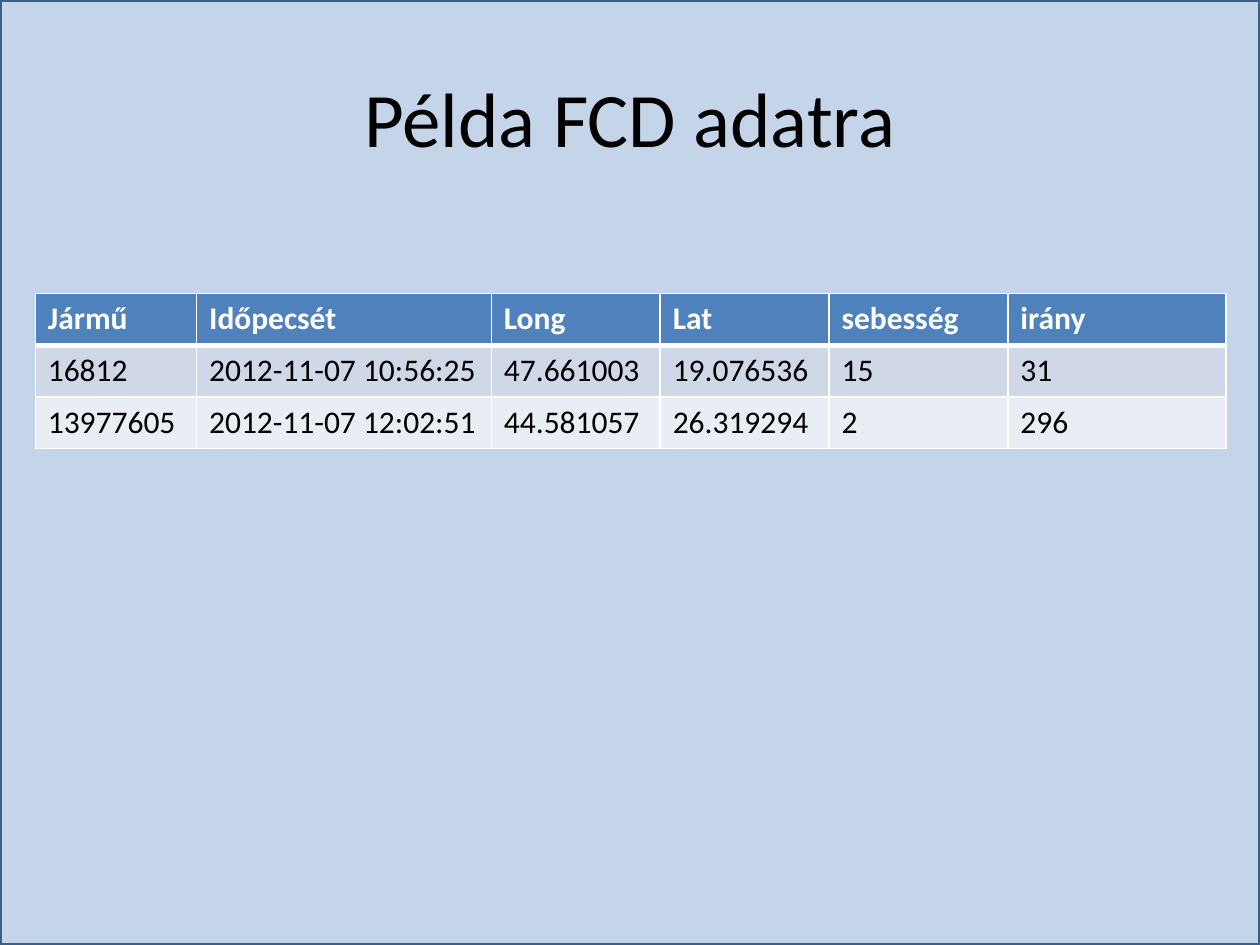
from lxml.etree import SubElement
from pptx import Presentation
from pptx.dml.color import RGBColor
from pptx.enum.shapes import MSO_SHAPE
from pptx.enum.text import MSO_ANCHOR, PP_ALIGN
from pptx.oxml.ns import qn
from pptx.util import Inches, Pt

COLUMN_WIDTHS = [1.28, 2.34, 1.34, 1.34, 1.42, 1.73]
ROW_HEIGHT = 0.41
ROW_FILLS = ["4F81BD", "D0D8E8", "E9EDF4"]
RECORDS = [
    ["Jármű", "Időpecsét", "Long", "Lat", "sebesség", "irány"],
    ["16812", "2012-11-07 10:56:25", "47.661003", "19.076536", "15", "31"],
    ["13977605", "2012-11-07 12:02:51", "44.581057", "26.319294", "2", "296"],
]


def paint(color_format, color):
    color_format.rgb = RGBColor.from_string(color)


def fill_solid(fill, color):
    fill.solid()
    paint(fill.fore_color, color)


def add_text(paragraph, text, size, color, bold=False):
    run = paragraph.add_run()
    run.text = text
    run.font.name = "Calibri"
    run.font.size = Pt(size)
    run.font.bold = bold
    paint(run.font.color, color)


def add_backdrop(slide, width, height):
    backdrop = slide.shapes.add_shape(MSO_SHAPE.RECTANGLE, 0, 0, width, height)
    backdrop.shadow.inherit = False
    fill_solid(backdrop.fill, "95B3D7")
    tint = backdrop.fill._xPr.find(qn("a:solidFill"))[0]
    SubElement(tint, qn("a:alpha"), val="54000")
    backdrop.line.width = Pt(2)
    paint(backdrop.line.color, "3A5F8C")


def add_title(slide, text):
    title = slide.shapes.add_textbox(Inches(0.5), Inches(0.3), Inches(9), Inches(1.25))
    frame = title.text_frame
    frame.word_wrap = True
    frame.vertical_anchor = MSO_ANCHOR.MIDDLE
    heading = frame.paragraphs[0]
    heading.alignment = PP_ALIGN.CENTER
    add_text(heading, text, 44, "000000")


def add_border(cell, side, points):
    properties = cell._tc.get_or_add_tcPr()
    border = SubElement(properties, qn(f"a:{side}"), w=str(Pt(points)))
    stroke = SubElement(border, qn("a:solidFill"))
    SubElement(stroke, qn("a:srgbClr"), val="FFFFFF")


def style_cell(cell, text, row):
    is_header = row == 0
    widths = {"lnL": 1, "lnR": 1, "lnT": 3 if row == 1 else 1, "lnB": 3 if is_header else 1}
    for side, points in widths.items():
        add_border(cell, side, points)
    fill_solid(cell.fill, ROW_FILLS[row])
    color = "FFFFFF" if is_header else "000000"
    add_text(cell.text_frame.paragraphs[0], text, 18, color, is_header)


def add_records(slide):
    table = slide.shapes.add_table(
        len(RECORDS), len(COLUMN_WIDTHS), Inches(0.28), Inches(2.33),
        Inches(sum(COLUMN_WIDTHS)), Inches(ROW_HEIGHT * len(RECORDS)),
    ).table
    for column, width in zip(table.columns, COLUMN_WIDTHS):
        column.width = Inches(width)
    for row, record in enumerate(RECORDS):
        table.rows[row].height = Inches(ROW_HEIGHT)
        for column, value in enumerate(record):
            style_cell(table.cell(row, column), value, row)


def main():
    deck = Presentation()
    deck.slide_width = Inches(10)
    deck.slide_height = Inches(7.5)
    slide = deck.slides.add_slide(deck.slide_layouts[6])
    add_backdrop(slide, deck.slide_width, deck.slide_height)
    add_title(slide, "Példa FCD adatra")
    add_records(slide)
    deck.save("out.pptx")


if __name__ == "__main__":
    main()
